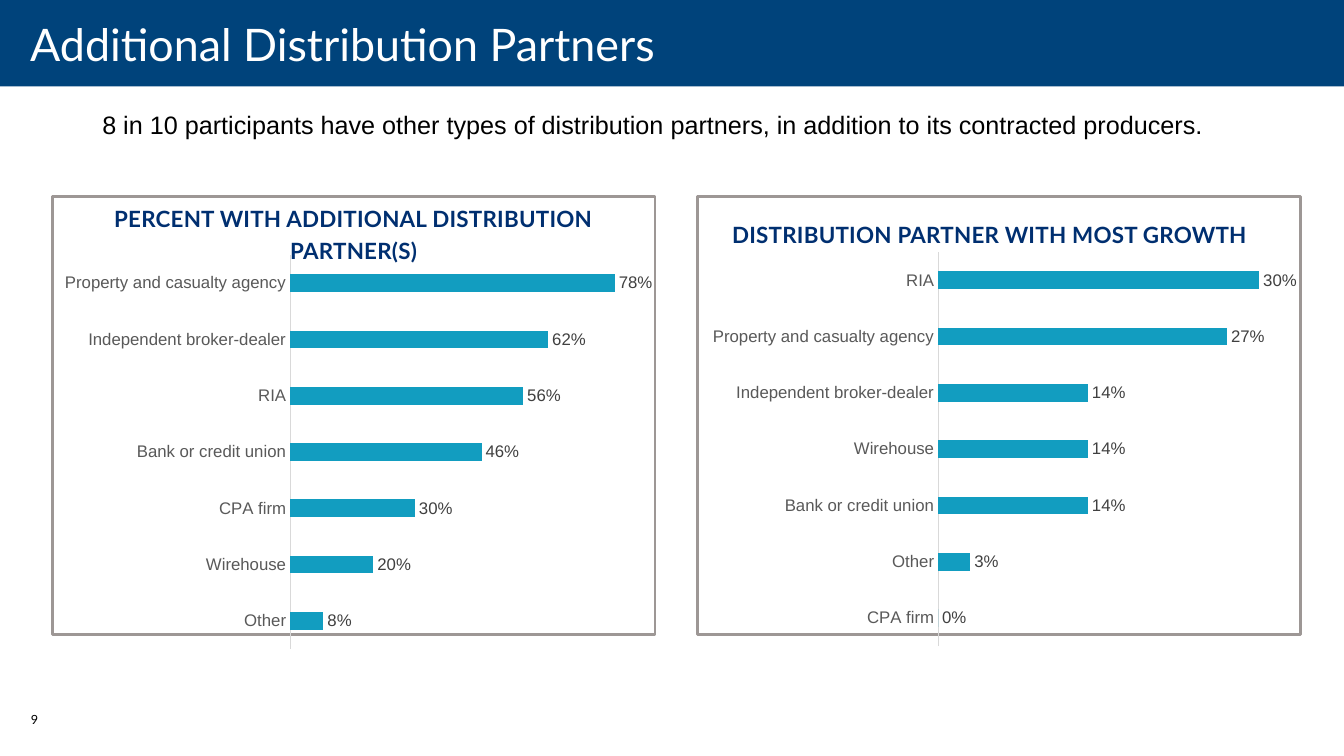
from pptx import Presentation
from pptx.chart.data import CategoryChartData
from pptx.dml.color import RGBColor
from pptx.enum.chart import XL_CHART_TYPE as ChartType, XL_LABEL_POSITION as LabelPosition, XL_TICK_MARK as TickMark
from pptx.enum.shapes import MSO_SHAPE as Shape
from pptx.enum.text import MSO_ANCHOR as Anchor, PP_ALIGN as Align
from pptx.util import Cm, Pt

NAVY = RGBColor(0x00, 0x43, 0x7B)
HEADING = RGBColor(0x00, 0x2F, 0x70)
TEAL = RGBColor(0x12, 0x9D, 0xC0)
FRAME = RGBColor(0x9D, 0x97, 0x95)
AXIS = RGBColor(0xD9, 0xD9, 0xD9)
CATEGORY = RGBColor(0x59, 0x59, 0x59)
VALUE = RGBColor(0x40, 0x40, 0x40)
BLACK = RGBColor(0x00, 0x00, 0x00)
WHITE = RGBColor(0xFF, 0xFF, 0xFF)

SLIDE_WIDTH = 33.87
PANEL_WIDTH = 15.19


class SlideBuilder:
    heading_font = "Lato"
    body_font = "Arial"

    def __init__(self, slide):
        self.slide = slide

    def style(self, font, name, size, color, bold=False):
        font.name = name
        font.size = Pt(size)
        font.color.rgb = color
        font.bold = bold

    def rectangle(self, left, top, width, height, fill=None, line=None):
        rectangle = self.slide.shapes.add_shape(
            Shape.RECTANGLE, Cm(left), Cm(top), Cm(width), Cm(height))
        rectangle.shadow.inherit = False
        if fill is None:
            rectangle.fill.background()
        else:
            rectangle.fill.solid()
            rectangle.fill.fore_color.rgb = fill
        if line is None:
            rectangle.line.fill.background()
        else:
            rectangle.line.color.rgb = line
            rectangle.line.width = Pt(2)

    def text(self, left, top, width, height, words, font, size, color,
             bold=False, align=Align.LEFT, anchor=Anchor.TOP):
        box = self.slide.shapes.add_textbox(Cm(left), Cm(top), Cm(width), Cm(height))
        frame = box.text_frame
        frame.word_wrap = True
        frame.vertical_anchor = anchor
        paragraph = frame.paragraphs[0]
        paragraph.alignment = align
        run = paragraph.add_run()
        run.text = words
        self.style(run.font, font, size, color, bold)
        return frame

    def title(self, words):
        frame = self.text(0, -0.13, SLIDE_WIDTH, 2.46, words,
                          self.heading_font, 32, WHITE, anchor=Anchor.MIDDLE)
        frame.word_wrap = False
        frame.margin_left, frame.margin_right = Cm(0.76), Cm(0.51)
        frame.margin_top = frame.margin_bottom = 0

    def chart_heading(self, left, words):
        frame = self.text(left, 5.28, PANEL_WIDTH, 1.12, words, self.heading_font, 16,
                          HEADING, True, Align.CENTER, Anchor.MIDDLE)
        paragraph = frame.paragraphs[0]
        paragraph.line_spacing = 1.2
        paragraph.space_after = Pt(12.6)
        paragraph.runs[0]._r.get_or_add_rPr().set("spc", "20")

    def bar_chart(self, left, top, shares, maximum):
        data = CategoryChartData(number_format="0%")
        data.categories = list(shares)
        data.add_series("Series 1", list(shares.values()))
        chart = self.slide.shapes.add_chart(
            ChartType.BAR_CLUSTERED, Cm(left), Cm(top), Cm(15.75), Cm(10.34), data).chart
        chart.has_legend = False
        chart.has_title = False
        self.style(chart.font, self.body_font, 10, BLACK)

        partners = chart.category_axis
        partners.major_tick_mark = partners.minor_tick_mark = TickMark.NONE
        partners.has_major_gridlines = False
        partners.format.line.color.rgb = AXIS
        partners.format.line.width = Pt(0.75)
        self.style(partners.tick_labels.font, self.body_font, 12, CATEGORY)

        percent = chart.value_axis
        percent.visible = False
        percent.has_major_gridlines = False
        percent.minimum_scale = 0
        percent.maximum_scale = maximum

        plot = chart.plots[0]
        plot.gap_width = 219
        plot.vary_by_categories = False
        bars = plot.series[0]
        bars.format.fill.solid()
        bars.format.fill.fore_color.rgb = TEAL
        labels = bars.data_labels
        labels.show_value = True
        labels.position = LabelPosition.OUTSIDE_END
        labels.number_format = "0%"
        labels.number_format_is_linked = False
        self.style(labels.font, self.body_font, 12, VALUE)


def main():
    presentation = Presentation()
    presentation.slide_width = Cm(SLIDE_WIDTH)
    presentation.slide_height = Cm(19.05)
    builder = SlideBuilder(presentation.slides.add_slide(presentation.slide_layouts[6]))

    for panel_left in (17.58, 1.32):
        builder.rectangle(panel_left, 4.95, PANEL_WIDTH, 11.05, line=FRAME)
    builder.rectangle(0, 0, SLIDE_WIDTH, 2.18, fill=NAVY)

    builder.text(0.79, 2.64, 31.32, 1.02,
                 "8 in 10 participants have other types of distribution partners, "
                 "in addition to its contracted producers.",
                 builder.body_font, 18, BLACK, align=Align.CENTER)
    builder.text(0.53, 17.81, 1.24, 1.02, "9", builder.heading_font, 9, BLACK)
    builder.title("Additional Distribution Partners")
    builder.chart_heading(1.32, "PERCENT WITH ADDITIONAL DISTRIBUTION PARTNER(S)")
    builder.chart_heading(17.35, "DISTRIBUTION PARTNER WITH MOST GROWTH")

    most_growth = {
        "CPA firm": 0,
        "Other": 0.03,
        "Bank or credit union": 0.14,
        "Wirehouse": 0.14,
        "Independent broker-dealer": 0.14,
        "Property and casualty agency": 0.27,
        "RIA": 0.3,
    }
    additional_partners = {
        "Other": 0.08,
        "Wirehouse": 0.2,
        "CPA firm": 0.3,
        "Bank or credit union": 0.46,
        "RIA": 0.56,
        "Independent broker-dealer": 0.62,
        "Property and casualty agency": 0.78,
    }
    builder.bar_chart(17.65, 6.15, most_growth, 0.35)
    builder.bar_chart(1.32, 6.22, additional_partners, 0.9)

    presentation.save("out.pptx")


if __name__ == "__main__":
    main()
